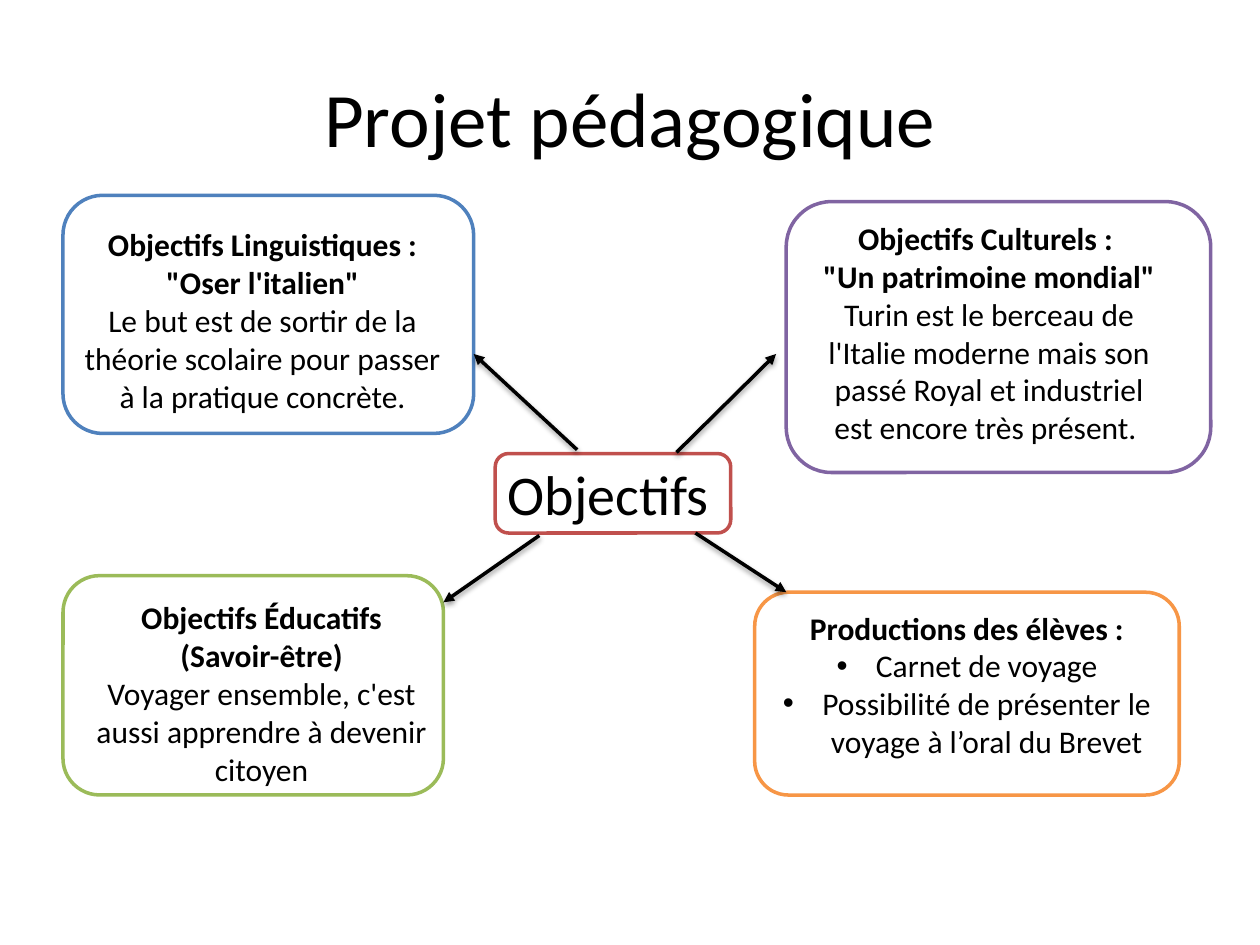
from dataclasses import dataclass

from pptx import Presentation
from pptx.dml.color import RGBColor
from pptx.enum import shapes, text
from pptx.oxml import parse_xml
from pptx.oxml.ns import nsdecls, qn
from pptx.util import Pt

FONT = "Calibri"
BLACK, WHITE = "000000", "FFFFFF"
Rect = tuple[float, float, float, float]


@dataclass
class Line:
    text: str
    bold: bool = False
    bullet: bool = False


@dataclass
class Goal:
    frame: Rect
    color: str
    text_area: Rect
    lines: list[Line]


# Content, all lengths in points
TITLE_AREA = (36, 21.6, 648, 90)
HUB = (283, 259.2, 134.6, 45.4)
HUB_COLOR = "C0504D"
GOALS = [
    Goal((431.3, 338.4, 242.6, 115.9), "F79646", (431.3, 344.2, 242.6, 94.3), [
        Line("Productions des élèves :", bold=True),
        Line("Carnet de voyage", bullet=True),
        Line("Possibilité de présenter le voyage à l’oral du Brevet", bullet=True),
    ]),
    Goal((449.3, 115.2, 242.6, 154.8), "8064A2", (457.9, 121.7, 214.6, 138.2), [
        Line("Objectifs Culturels : ", bold=True),
        Line('"Un patrimoine mondial"', bold=True),
        Line("Turin est le berceau de l'Italie moderne mais son passé Royal "
             "et industriel est encore très présent. "),
    ]),
    Goal((36, 111.6, 234.7, 136.1), "4F81BD", (36, 125.3, 228.2, 116.6), [
        Line("Objectifs Linguistiques : \"Oser l'italien\"", bold=True),
        Line("Le but est de sortir de la théorie scolaire pour passer "
             "à la pratique concrète."),
    ]),
    Goal((36, 329, 217.4, 125.3), "9BBB59", (45.4, 338.4, 208.1, 143.3), [
        Line("Objectifs Éducatifs (Savoir-être)", bold=True),
        Line("Voyager ensemble, c'est aussi apprendre à devenir citoyen"),
    ]),
]
ARROWS = [  # start x, start y, end x, end y
    (397.4, 304.6, 449.3, 338.4),
    (308.2, 306, 253.4, 344.2),
    (386.6, 258.5, 443.5, 202.3),
    (329.8, 257, 270.7, 202.3),
]


def rgb(value: str) -> RGBColor:
    return RGBColor.from_string(value)


def place(sp, area: Rect) -> None:
    sp.left, sp.top, sp.width, sp.height = map(Pt, area)


def add_run(p, content: str, size: float, bold: bool = False) -> None:
    r = p.add_run()
    r.text = content
    r.font.name, r.font.size, r.font.bold = FONT, Pt(size), bold
    r.font.color.rgb = rgb(BLACK)


def set_bullet(p, char: str = "", indent: float = 0) -> None:
    """Give a paragraph a hanging bullet, or none if char is empty."""
    pPr = p._p.get_or_add_pPr()
    pPr.set("marL", str(Pt(indent)))
    pPr.set("indent", str(-Pt(indent)))
    if char:
        pPr.append(parse_xml(f'<a:buFont {nsdecls("a")} typeface="Arial"/>'))
        pPr.append(parse_xml(f'<a:buChar {nsdecls("a")} char="{char}"/>'))
    else:
        pPr.append(parse_xml(f'<a:buNone {nsdecls("a")}/>'))


def add_frame(s, area: Rect, color: str):
    sp = s.shapes.add_shape(shapes.MSO_SHAPE.ROUNDED_RECTANGLE, *map(Pt, area))
    sp.shadow.inherit = False
    sp.fill.solid()
    sp.fill.fore_color.rgb = rgb(WHITE)
    sp.line.color.rgb = rgb(color)
    sp.line.width = Pt(2)
    return sp


def add_goal(s, goal: Goal) -> None:
    add_frame(s, goal.frame, goal.color)
    tf = s.shapes.add_textbox(*map(Pt, goal.text_area)).text_frame
    tf.word_wrap = True
    for i, line in enumerate(goal.lines):
        p = tf.add_paragraph() if i else tf.paragraphs[0]
        p.alignment = text.PP_ALIGN.CENTER
        if line.bullet:
            set_bullet(p, "•", 22.5)
        add_run(p, line.text, 18, line.bold)


def add_arrow(s, ends: Rect) -> None:
    c = s.shapes.add_connector(shapes.MSO_CONNECTOR.STRAIGHT, *map(Pt, ends))
    c.line.color.rgb = rgb(BLACK)
    c.line.width = Pt(2)
    c.line._get_or_add_ln().append(
        parse_xml(f'<a:tailEnd {nsdecls("a")} type="triangle"/>'))
    c._element.find(qn("p:spPr")).append(parse_xml(
        f'<a:effectLst {nsdecls("a")}>'
        f'<a:outerShdw blurRad="{Pt(3.1)}" dist="{Pt(1.6)}" dir="5400000" rotWithShape="0">'
        f'<a:srgbClr val="{BLACK}"><a:alpha val="38000"/></a:srgbClr>'
        '</a:outerShdw></a:effectLst>'))


def main() -> None:
    prs = Presentation()
    prs.slide_width, prs.slide_height = Pt(720), Pt(540)
    s = prs.slides.add_slide(prs.slide_layouts[1])

    # Title
    title = s.shapes.title
    place(title, TITLE_AREA)
    title.text_frame.vertical_anchor = text.MSO_ANCHOR.MIDDLE
    p = title.text_frame.paragraphs[0]
    p.alignment = text.PP_ALIGN.CENTER
    add_run(p, "Projet pédagogique", 44)

    # Central label, with its frame moved behind it
    body = s.placeholders[1]
    place(body, HUB)
    body.text_frame.auto_size = text.MSO_AUTO_SIZE.NONE
    p = body.text_frame.paragraphs[0]
    set_bullet(p)
    p.space_before = Pt(0)
    add_run(p, "Objectifs", 32)
    body.element.addprevious(add_frame(s, HUB, HUB_COLOR).element)

    # Goals around the label, then the arrows to them
    for goal in GOALS:
        add_goal(s, goal)
    for ends in ARROWS:
        add_arrow(s, ends)

    prs.save("out.pptx")


if __name__ == "__main__":
    main()
